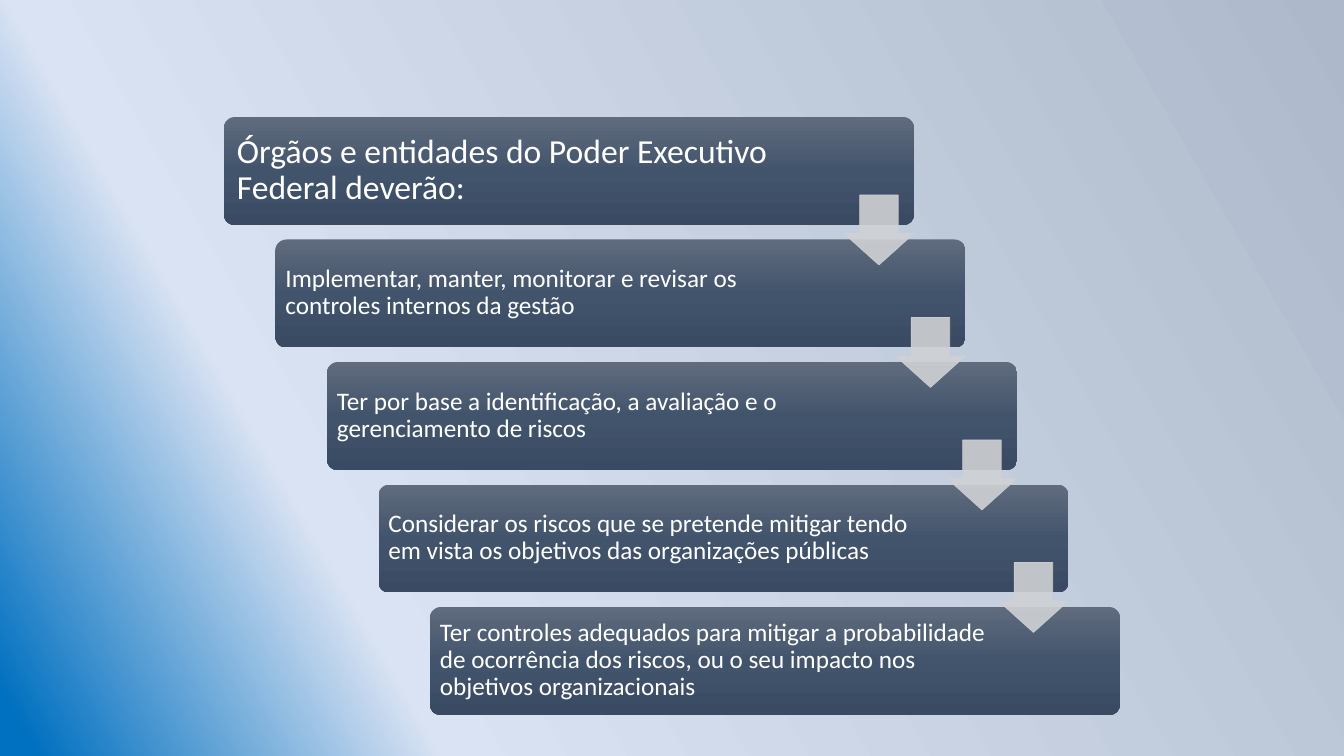
from lxml.etree import SubElement
from pptx import Presentation
from pptx.dml.color import RGBColor
from pptx.enum.shapes import MSO_SHAPE as Preset
from pptx.enum.text import MSO_ANCHOR as Anchor
from pptx.oxml.ns import qn
from pptx.util import Emu, Pt

PX = 914400 / 100.8
WHITE = RGBColor(0xFF, 0xFF, 0xFF)
ARROW_GREY = RGBColor(0xCF, 0xD1, 0xD4)
PAGE_STOPS = [
    (0, RGBColor(0xAD, 0xB9, 0xCA)),
    (75, RGBColor(0xDA, 0xE3, 0xF3)),
    (98, RGBColor(0x00, 0x70, 0xC0)),
]
STEP_STOPS = [
    (0, RGBColor(0x60, 0x6B, 0x7D)),
    (50, RGBColor(0x42, 0x54, 0x6C)),
    (100, RGBColor(0x39, 0x4A, 0x62)),
]
HEADING = {"size": Pt(24), "name": "Calibri"}
BODY = {"size": Pt(18), "name": "Calibri"}

# Text, font format and inner margin of each step
STEPS = [
    ("Órgãos e entidades do Poder Executivo Federal deverão:", HEADING, 10),
    ("Implementar, manter, monitorar e revisar os controles internos da gestão", BODY, 7),
    ("Ter por base a identificação, a avaliação e o gerenciamento de riscos", BODY, 7),
    ("Considerar os riscos que se pretende mitigar tendo em vista os objetivos "
     "das organizações públicas", BODY, 7),
    ("Ter controles adequados para mitigar a probabilidade de ocorrência dos riscos, "
     "ou o seu impacto nos objetivos organizacionais", BODY, 7),
]
STEP_WIDTH, STEP_HEIGHT = 690, 108
ARROW_SIZE, ARROW_DROP = 70, 78


def px(*lengths):
    return [Emu(round(length * PX)) for length in lengths]


def fill_gradient(fill, element, stops, angle):
    """Fill with any number of stops; the angle runs clockwise."""
    fill.gradient()
    gradient = element.xpath(".//a:gradFill")[0]
    stop_list = gradient.find(qn("a:gsLst"))
    for old_stop in list(stop_list):
        stop_list.remove(old_stop)
    for position, color in stops:
        stop = SubElement(stop_list, qn("a:gs"), pos=str(position * 1000))
        SubElement(stop, qn("a:srgbClr"), val=str(color))
    gradient.find(qn("a:lin")).set("ang", str(angle * 60000))


def add_preset(page, preset, box, adjustments):
    shape = page.shapes.add_shape(preset, *px(*box))
    shape.shadow.inherit = False
    for index, value in enumerate(adjustments):
        shape.adjustments[index] = value
    return shape


def add_step(page, box, text, font_format, margin):
    left, top, width, height = box
    panel = add_preset(page, Preset.ROUNDED_RECTANGLE, box, [0.1])
    fill_gradient(panel.fill, panel.element, STEP_STOPS, 90)
    panel.line.fill.background()

    # The label leaves the right end free for the arrows
    label = page.shapes.add_textbox(*px(left + 3, top + 3, width - 128, height - 7))
    frame = label.text_frame
    frame.word_wrap = True
    frame.vertical_anchor = Anchor.MIDDLE
    for side in ("left", "top", "right", "bottom"):
        setattr(frame, f"margin_{side}", px(margin)[0])
    para = frame.paragraphs[0]
    para.line_spacing = 0.9
    span = para.add_run()
    span.text = text
    for name, value in font_format.items():
        setattr(span.font, name, value)
    span.font.color.rgb = WHITE


def add_arrow(page, box):
    arrow = add_preset(page, Preset.DOWN_ARROW, box, [0.55, 0.45])
    arrow.line.width = Pt(0.5)
    for fill in (arrow.fill, arrow.line.fill):
        fill.solid()
        fill.fore_color.rgb = ARROW_GREY
    for color in arrow.element.xpath("./p:spPr//a:srgbClr"):
        SubElement(color, qn("a:alpha"), val="90000")


def add_staircase(page, box):
    left, top, width, height = box
    gaps = len(STEPS) - 1
    across = (width - STEP_WIDTH) / gaps
    down = (height - STEP_HEIGHT) / gaps
    corners = [(left + i * across, top + i * down) for i in range(len(STEPS))]

    for (x, y), step in zip(corners, STEPS):
        add_step(page, (x, y, STEP_WIDTH, STEP_HEIGHT), *step)

    # Arrows lie over the steps, flush with the right edge of the upper one
    for x, y in corners[:-1]:
        add_arrow(page, (x + STEP_WIDTH - ARROW_SIZE, y + ARROW_DROP,
                         ARROW_SIZE, ARROW_SIZE))


def main():
    deck = Presentation()
    deck.slide_width, deck.slide_height = px(1344, 756)
    page = deck.slides.add_slide(deck.slide_layouts[6])
    fill_gradient(page.background.fill, page.element, PAGE_STOPS, 150)
    add_staircase(page, (224, 117, 896, 598))
    deck.save("out.pptx")


if __name__ == "__main__":
    main()
